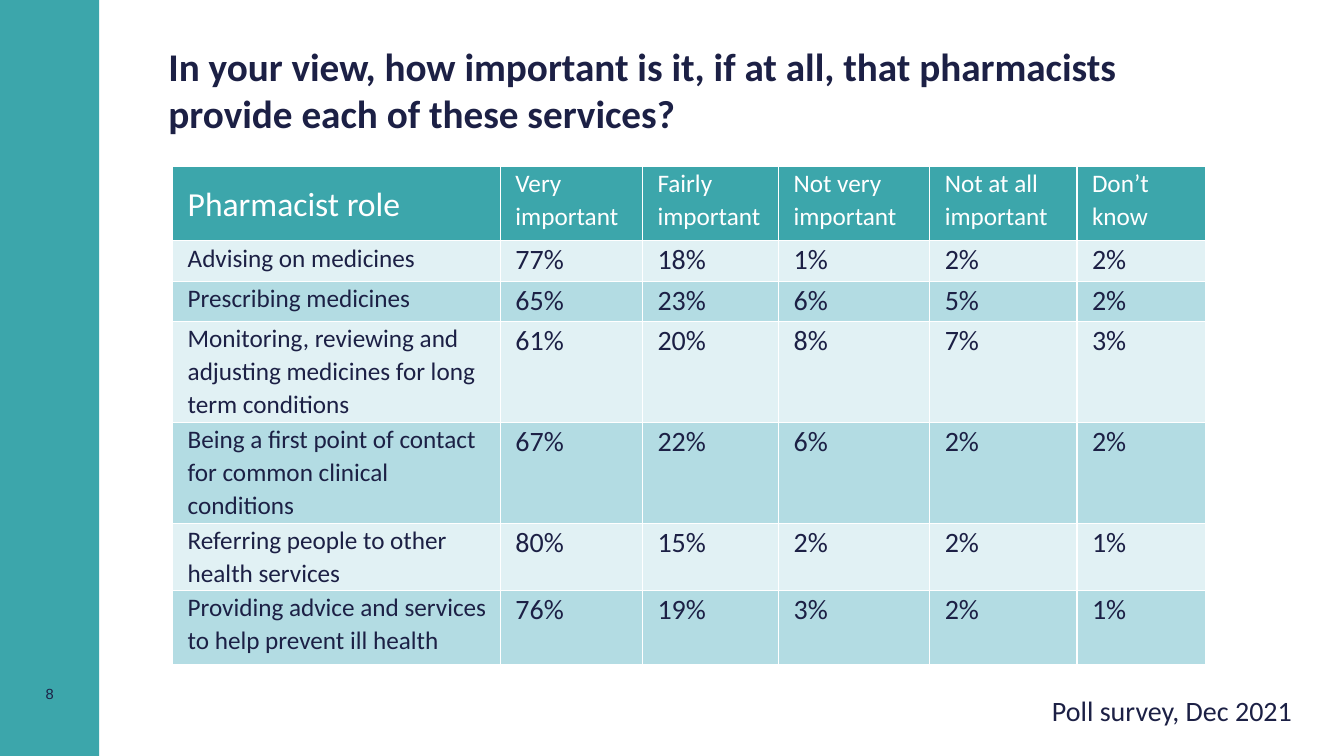
from lxml.etree import SubElement
from pptx import Presentation
from pptx.dml.color import RGBColor
from pptx.enum.shapes import MSO_SHAPE as Shape
from pptx.enum.text import MSO_ANCHOR as Anchor, MSO_AUTO_SIZE as AutoSize, PP_ALIGN as Align
from pptx.oxml.ns import qn
from pptx.util import Cm, Pt

TEAL, NAVY, WHITE = "3CA6AB", "1C2045", "FFFFFF"
BANDS = ["E1F1F4", "B3DCE3"]
COLUMN_WIDTHS = [8.26, 3.58, 3.43, 3.81, 3.71, 3.25]
ROW_HEIGHTS = [1.88, 1.02, 1.02, 2.54, 2.54, 1.68, 1.88]
RESPONSES = [
    ["Pharmacist role", "Very important", "Fairly important", "Not very important",
     "Not at all important", "Don’t know"],
    ["Advising on medicines", "77%", "18%", "1%", "2%", "2%"],
    ["Prescribing medicines", "65%", "23%", "6%", "5%", "2%"],
    ["Monitoring, reviewing and adjusting medicines for long term conditions",
     "61%", "20%", "8%", "7%", "3%"],
    ["Being a first point of contact for common clinical conditions",
     "67%", "22%", "6%", "2%", "2%"],
    ["Referring people to other health services", "80%", "15%", "2%", "2%", "1%"],
    ["Providing advice and services to help prevent ill health",
     "76%", "19%", "3%", "2%", "1%"],
]


def paint(target, color):
    """Give a fill one solid colour."""
    target.solid()
    target.fore_color.rgb = RGBColor.from_string(color)


def write(frame, text, size, color=NAVY, font="Calibri", bold=False, align=Align.LEFT):
    """Write one formatted paragraph and return it."""
    frame.text = text
    para = frame.paragraphs[0]
    para.alignment = align
    for span in para.runs:
        span.font.name, span.font.size, span.font.bold = font, Pt(size), bold
        paint(span.font.fill, color)
    return para


def add_label(page, box, text, size, **style):
    """Place a wrapped text box."""
    frame = page.shapes.add_textbox(*map(Cm, box)).text_frame
    frame.word_wrap = True
    write(frame, text, size, **style)


def add_sidebar(page, box, number):
    """Draw the side band with its page number."""
    left, top, width, height = box
    band = page.shapes.add_shape(Shape.RECTANGLE, *map(Cm, box))
    band.shadow.inherit = False
    paint(band.fill, TEAL)
    band.line.fill.background()
    add_label(page, (left, top + height - 1.93, width, 0.74), number, 10.5,
              font="Arial", align=Align.CENTER)


def add_title(page, box, text):
    """Move and format the title placeholder."""
    title = page.shapes.title
    title.left, title.top, title.width, title.height = map(Cm, box)
    frame = title.text_frame
    frame.auto_size, frame.vertical_anchor = AutoSize.NONE, Anchor.TOP
    write(frame, text, 28, bold=True)


def add_borders(cell):
    """Rule a cell with thin white lines on every side."""
    properties = cell._tc.get_or_add_tcPr()
    for side in ("lnL", "lnR", "lnT", "lnB"):
        line = SubElement(properties, qn(f"a:{side}"), w=str(Pt(1)))
        SubElement(SubElement(line, qn("a:solidFill")), qn("a:srgbClr"), val=WHITE)


def add_cell(cell, text, row, column):
    """Fill and format one cell by its place in the table."""
    header, role = row == 0, column == 0
    size = (24 if role else 18) if header else (18 if role else 20)
    cell.margin_left = cell.margin_right = Cm(0.18)
    cell.margin_top = cell.margin_bottom = 0
    cell.vertical_anchor = Anchor.MIDDLE if header and role else Anchor.TOP
    para = write(cell.text_frame, text, size, WHITE if header else NAVY)
    para.line_spacing = 1.07
    para._p.get_or_add_pPr().set("marL", str(Cm(0.2)))
    add_borders(cell)
    paint(cell.fill, TEAL if header else BANDS[(row - 1) % 2])


def add_responses(page, left, top):
    """Build the table of responses."""
    table = page.shapes.add_table(
        len(RESPONSES), len(COLUMN_WIDTHS), Cm(left), Cm(top),
        Cm(sum(COLUMN_WIDTHS)), Cm(sum(ROW_HEIGHTS))).table
    for column, width in zip(table.columns, COLUMN_WIDTHS):
        column.width = Cm(width)
    for row, height in zip(table.rows, ROW_HEIGHTS):
        row.height = Cm(height)
    for row, texts in enumerate(RESPONSES):
        for column, text in enumerate(texts):
            add_cell(table.cell(row, column), text, row, column)


def main():
    """Build and save the deck."""
    deck = Presentation()
    deck.slide_width, deck.slide_height = Cm(33.87), Cm(19.05)
    page = deck.slides.add_slide(deck.slide_layouts[5])
    add_sidebar(page, (0, 0, 2.5, 19.05), "8")
    add_title(page, (3.99, 0.94, 27.28, 3.43),
              "In your view, how important is it, if at all, that pharmacists "
              "provide each of these services?")
    add_responses(page, 4.35, 4.19)
    add_label(page, (26.26, 17.35, 7.39, 1.1), "Poll survey, Dec 2021", 20)
    deck.save("out.pptx")


if __name__ == "__main__":
    main()
